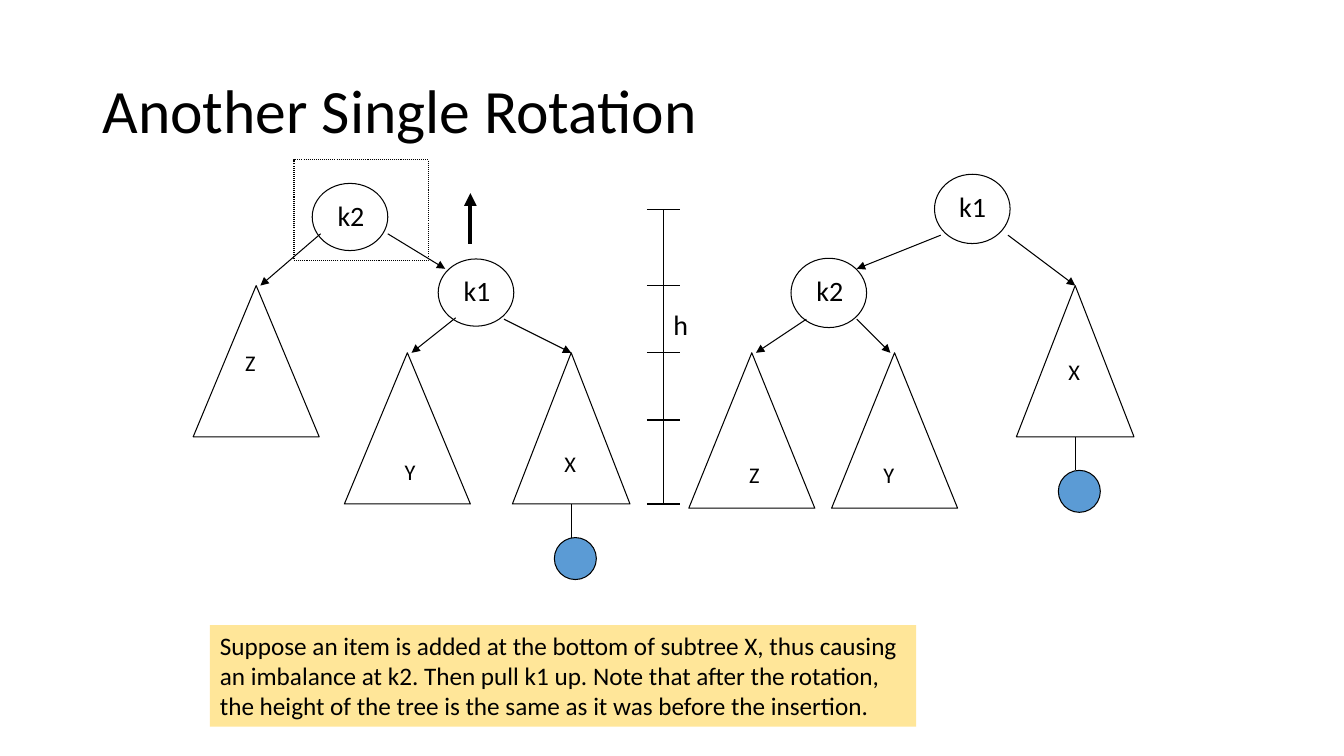
from lxml.etree import SubElement
from pptx import Presentation
from pptx.dml.color import RGBColor
from pptx.enum.dml import MSO_LINE
from pptx.enum.shapes import MSO_CONNECTOR, MSO_SHAPE
from pptx.enum.text import MSO_ANCHOR, MSO_AUTO_SIZE, PP_ALIGN
from pptx.oxml.ns import qn
from pptx.util import Pt

BLACK = RGBColor(0x00, 0x00, 0x00)
BLUE = RGBColor(0x5B, 0x9B, 0xD5)
YELLOW = RGBColor(0xFF, 0xE6, 0x99)

deck = Presentation()
deck.slide_width = Pt(960)
deck.slide_height = Pt(540)
page = deck.slides.add_slide(deck.slide_layouts[5])


def add_outline(kind, left, top, width, height, fill=None):
    shape = page.shapes.add_shape(kind, Pt(left), Pt(top), Pt(width), Pt(height))
    shape.shadow.inherit = False
    if fill is None:
        shape.fill.background()
    else:
        shape.fill.solid()
        shape.fill.fore_color.rgb = fill
    shape.line.color.rgb = BLACK
    shape.line.width = Pt(0.75)
    return shape


def add_line(x1, y1, x2, y2, arrow=False, weight=0.75):
    line = page.shapes.add_connector(
        MSO_CONNECTOR.STRAIGHT, Pt(x1), Pt(y1), Pt(x2), Pt(y2))
    line.line.color.rgb = BLACK
    line.line.width = Pt(weight)
    if arrow:
        SubElement(line.line._get_or_add_ln(), qn("a:tailEnd"), type="triangle")
    SubElement(line._element.spPr, qn("a:effectLst"))


title = page.shapes.title
title.left, title.top, title.width, title.height = Pt(66), Pt(28.75), Pt(828), Pt(104.5)
title.text_frame.text = "Another Single Rotation"
title.text_frame.vertical_anchor = MSO_ANCHOR.MIDDLE
heading = title.text_frame.paragraphs[0]
heading.alignment = PP_ALIGN.LEFT
heading.line_spacing = 0.9
heading.font.name = "Calibri"
heading.font.size = Pt(44)
heading.font.color.rgb = BLACK

nodes = [(223, 131, 48), (313, 185, 48), (565, 184.5, 49.5), (667.5, 124.5, 49.5)]
for left, top, height in nodes:
    add_outline(MSO_SHAPE.OVAL, left, top, 54, height)

subtrees = [
    (138, 204, 90, 108), (246, 252, 90, 108), (366, 252, 84, 108),
    (492, 252, 90, 111), (594, 252, 90, 111), (726, 204, 84, 108),
]
for left, top, width, height in subtrees:
    add_outline(MSO_SHAPE.FLOWCHART_EXTRACT, left, top, width, height)

branches = [
    (229, 167, 186, 204), (277, 167, 318, 192),
    (325.5, 227, 294, 252), (360, 228, 408, 252),
    (672, 168, 612, 192), (720, 168, 768, 204),
    (576, 228, 540, 252), (612, 228, 636, 252),
]
for branch in branches:
    add_line(*branch, arrow=True)

for left, top in [(396, 384), (756, 336)]:
    add_outline(MSO_SHAPE.OVAL, left, top, 30, 30, BLUE)
    add_line(left + 12, top - 24, left + 12, top)

add_line(474, 150, 474, 360)
for level in (150, 204, 252, 300, 360):
    add_line(462, level, 486, level)

unbalanced = add_outline(MSO_SHAPE.RECTANGLE, 210, 114, 96, 72)
unbalanced.line.dash_style = MSO_LINE.ROUND_DOT
add_line(336, 174, 336, 138, arrow=True, weight=3)

labels = [
    ("k2", 234, 138, 34.5, 20), ("k1", 324, 192, 34.5, 20),
    ("k2", 576, 192, 34.5, 20), ("k1", 678, 132, 34.5, 20),
    ("h", 474, 216, 25, 20),
    ("Z", 168, 246, 22.5, 16), ("Y", 282, 324, 22.5, 16), ("X", 396, 318, 23, 16),
    ("Z", 528, 325.5, 22.5, 16), ("Y", 624, 325.5, 22.5, 16), ("X", 756, 252, 23, 16),
]
for text, left, top, width, size in labels:
    box = page.shapes.add_textbox(Pt(left), Pt(top), Pt(width), Pt(size * 1.2 + 7.2))
    box.text_frame.word_wrap = False
    box.text_frame.auto_size = MSO_AUTO_SIZE.SHAPE_TO_FIT_TEXT
    para = box.text_frame.paragraphs[0]
    para.text = text
    para.font.name = "Calibri"
    para.font.size = Pt(size)
    para.font.color.rgb = BLACK

note = add_outline(MSO_SHAPE.RECTANGLE, 150, 446.5, 504.5, 72.5, YELLOW)
note.line.fill.background()
note.text_frame.word_wrap = False
note.text_frame.auto_size = MSO_AUTO_SIZE.SHAPE_TO_FIT_TEXT
note.text_frame.vertical_anchor = MSO_ANCHOR.TOP
note.text_frame.text = "\n".join([
    "Suppose an item is added at the bottom of subtree X, thus causing",
    "an imbalance at k2. Then pull k1 up. Note that after the rotation,",
    "the height of the tree is the same as it was before the insertion.",
])
for para in note.text_frame.paragraphs:
    para.alignment = PP_ALIGN.LEFT
    para.font.name = "Calibri"
    para.font.size = Pt(18)
    para.font.color.rgb = BLACK

deck.save("out.pptx")
